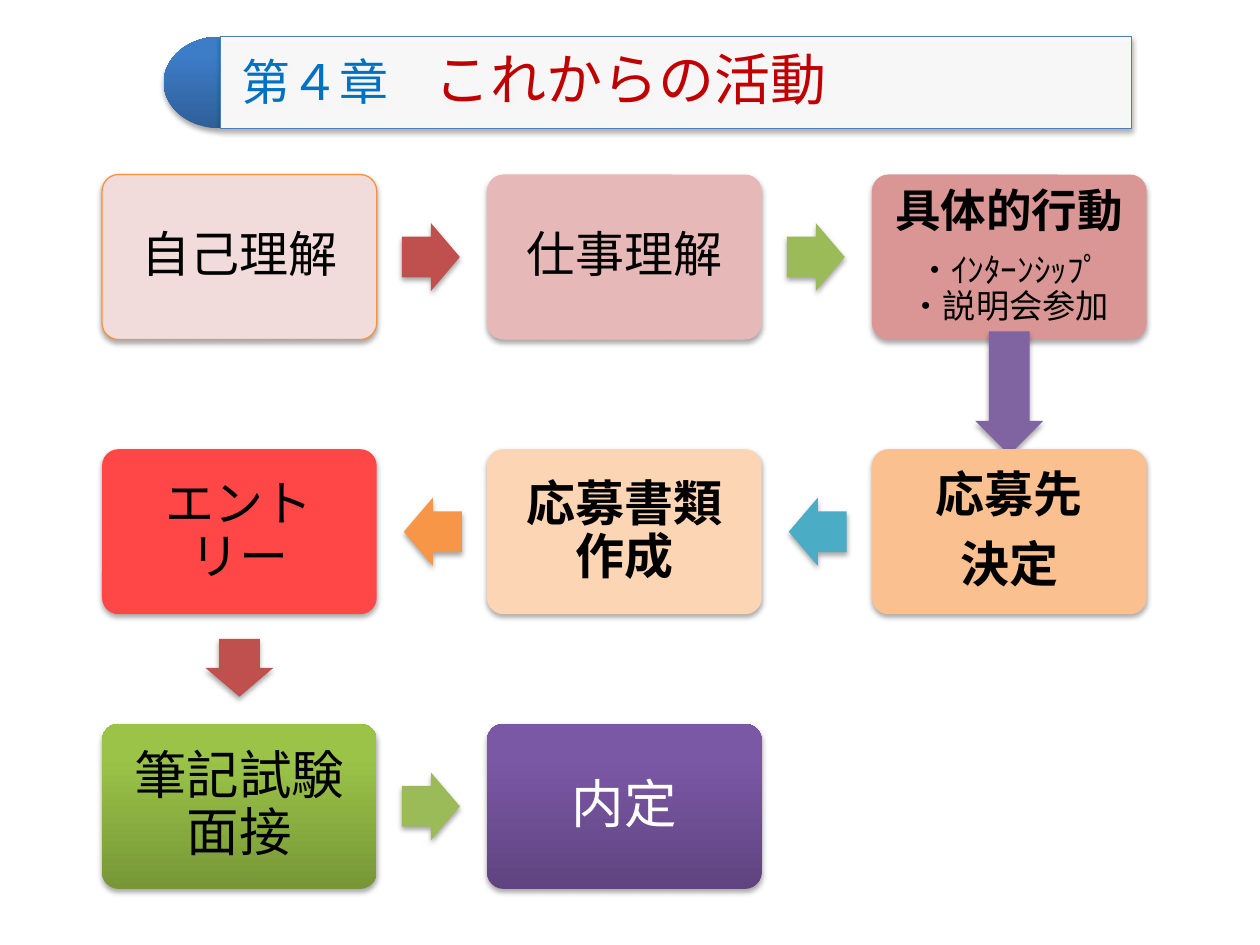
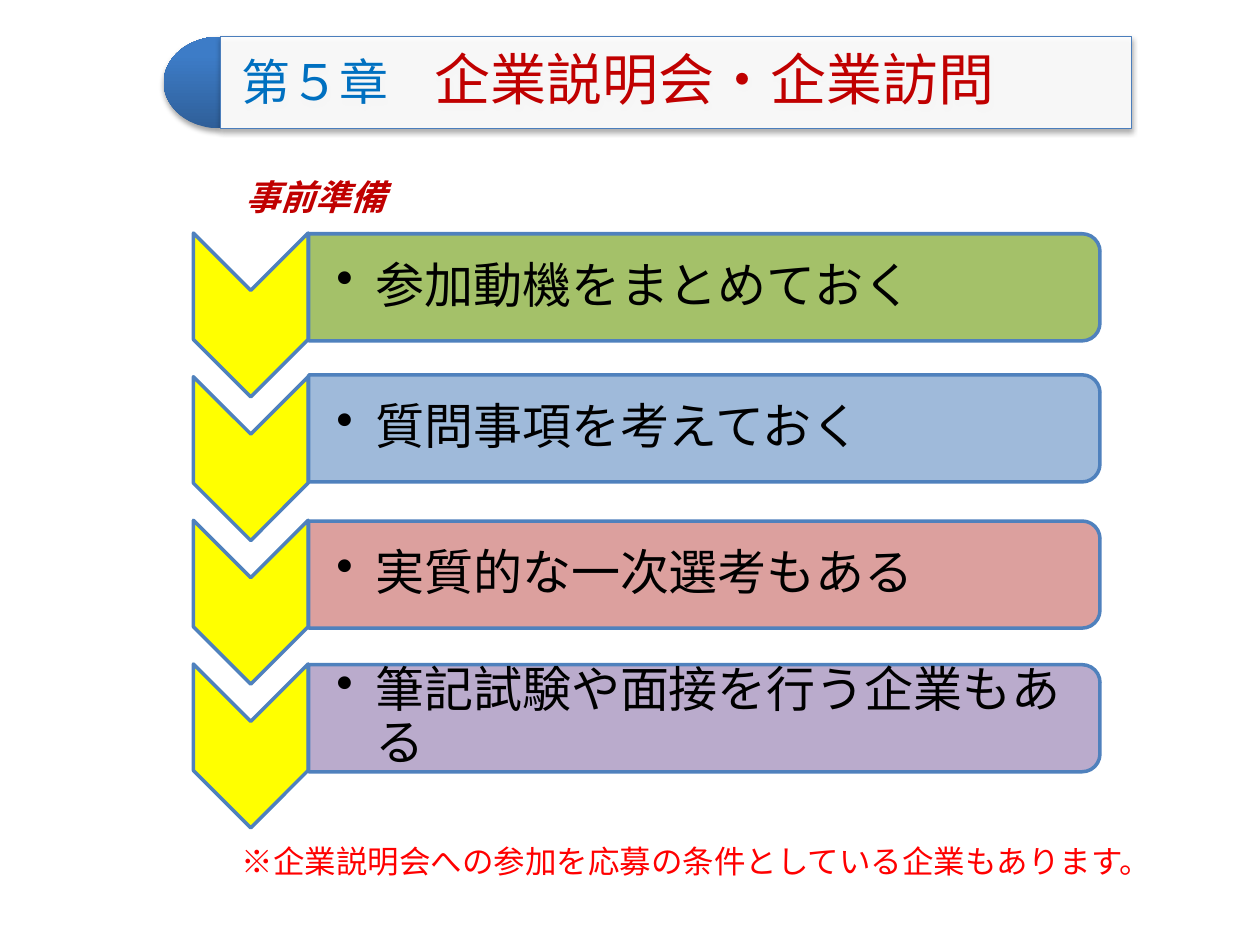
from dataclasses import dataclass

from lxml import etree
from pptx import Presentation
from pptx import util as u
from pptx.dml.color import RGBColor
from pptx.enum import shapes, text
from pptx.oxml import ns

SHAPE = shapes.MSO_SHAPE


@dataclass(frozen=True)
class Theme:
    font: str = "Calibri"
    title_font: str = "Noto Sans CJK JP"
    black: str = "000000"
    white: str = "FFFFFF"
    chapter: str = "0070C0"
    heading: str = "C00000"
    note: str = "FF0000"
    title_line: str = "4B7EBC"
    step_line: str = "4F81BD"
    chevron: str = "FFFF00"
    blue: tuple = ("2F5F99", "3D7CC7")
    green: tuple = ("779737", "9BC348")
    purple: tuple = ("5F4480", "7B58A6")
    title_size: int = 32
    large: int = 30
    body: int = 28
    medium: int = 26
    subhead: int = 20
    detail: int = 19
    small: int = 18


class Painter:
    """Holds the theme, the deck and the current page."""

    def __init__(self, theme):
        self.theme = theme
        self.deck = Presentation()
        self.deck.slide_width = u.Inches(10)
        self.deck.slide_height = u.Inches(7.5)
        self.page = None

    def new_page(self):
        self.page = self.deck.slides.add_slide(self.deck.slide_layouts[6])

    # Shapes
    def shape(self, kind, left, top, width, height, fill, line=None,
              weight=0.75, alpha=None, shadow=False, adjust=(), turn=0):
        box = self.page.shapes.add_shape(
            kind, *map(u.Inches, (left, top, width, height)))
        box.rotation = turn
        for index, value in enumerate(adjust):
            box.adjustments[index] = value
        self.paint(box, fill, alpha)
        if line:
            box.line.color.rgb = RGBColor.from_string(line)
            box.line.width = u.Pt(weight)
        else:
            box.line.fill.background()
        box.shadow.inherit = False
        if shadow:
            self.add_shadow(box)
        return box

    def centred(self, kind, x, y, width, height, fill, **style):
        """Place a shape, often a turned one, by its centre."""
        return self.shape(kind, x - width / 2, y - height / 2,
                          width, height, fill, **style)

    def paint(self, box, fill, alpha):
        if isinstance(fill, tuple):
            box.fill.gradient()
            box.fill.gradient_angle = 90
            for stop, colour, place in zip(box.fill.gradient_stops, fill, (0, 0.8)):
                stop.color.rgb = RGBColor.from_string(colour)
                stop.position = place
            return
        box.fill.solid()
        box.fill.fore_color.rgb = RGBColor.from_string(fill)
        if alpha:
            colour = box._element.spPr.find(ns.qn("a:solidFill"))[0]
            etree.SubElement(colour, ns.qn("a:alpha"), val=str(alpha * 1000))

    def add_shadow(self, box):
        effects = box._element.spPr.find(ns.qn("a:effectLst"))
        outer = etree.SubElement(
            effects, ns.qn("a:outerShdw"), blurRad=str(u.Pt(3.1)),
            dist=str(u.Pt(1.8)), dir="5400000", rotWithShape="0")
        colour = etree.SubElement(outer, ns.qn("a:srgbClr"), val=self.theme.black)
        etree.SubElement(colour, ns.qn("a:alpha"), val="35000")

    # Text
    def frame(self, box, margins=(0.1, 0.05, 0.1, 0.05),
              anchor=text.MSO_ANCHOR.MIDDLE):
        frame = box.text_frame
        frame.word_wrap = True
        frame.vertical_anchor = anchor
        (frame.margin_left, frame.margin_top,
         frame.margin_right, frame.margin_bottom) = map(u.Inches, margins)
        return frame

    def style(self, font, size, colour, name=None, bold=False, italic=False):
        font.name = name or self.theme.font
        font.size = u.Pt(size)
        font.color.rgb = RGBColor.from_string(colour)
        font.bold = bold
        font.italic = italic

    def space(self, para, align, after):
        para.alignment = align
        para.line_spacing = 0.9
        para.space_after = u.Pt(after)

    def textbox(self, left, top, width, height, **frame_style):
        box = self.page.shapes.add_textbox(
            *map(u.Inches, (left, top, width, height)))
        return self.frame(box, **frame_style)

    def label(self, words, left, top, width, height, size, colour, **font):
        para = self.textbox(left, top, width, height,
                            anchor=text.MSO_ANCHOR.TOP).paragraphs[0]
        para.text = words
        self.style(para.font, size, colour, **font)

    # Chapter title band
    def title(self, chapter, heading):
        theme = self.theme
        self.shape(SHAPE.PIE, 1.3, 0.29, 0.9, 0.73, theme.blue,
                   shadow=True, adjust=(54, 162))
        band = self.shape(SHAPE.RECTANGLE, 1.75, 0.29, 7.23, 0.73, theme.white,
                          line=theme.title_line, alpha=90, shadow=True)
        para = self.frame(band, (0.17,) * 4).paragraphs[0]
        self.space(para, text.PP_ALIGN.LEFT, 0.35 * theme.title_size)
        for words, size, colour, name in (
                (chapter, theme.body, theme.chapter, theme.title_font),
                ("\u3000".replace("\u3000", "　"), theme.medium, theme.black, theme.font),
                (heading, theme.title_size, theme.heading, theme.title_font)):
            span = para.add_run()
            span.text = words
            self.style(span.font, size, colour, name)

    # Flow chart
    def card(self, x, y, fill, lines, colour, line=None):
        """Draw a card; lines holds (words, size, bold) paragraphs."""
        box = self.centred(SHAPE.ROUNDED_RECTANGLE, x, y, 2.18, 1.31, fill,
                           line=line, shadow=True, adjust=(0.1,))
        frame = self.frame(box, (0.12,) * 4)
        for index, (words, size, bold) in enumerate(lines):
            para = frame.add_paragraph() if index else frame.paragraphs[0]
            para.text = words
            self.space(para, text.PP_ALIGN.CENTER, 0.35 * size)
            self.style(para.font, size, colour, bold=bold)

    def arrow(self, x, y, fill, turn=0, length=0.46):
        self.centred(SHAPE.RIGHT_ARROW, x, y, length, 0.54, fill,
                     shadow=True, adjust=(0.6, 0.5), turn=turn)

    # Chevron list
    def step(self, words, fill, chevron_y, band_y):
        theme = self.theme
        outline = dict(line=theme.step_line, weight=2, turn=90)
        self.centred(SHAPE.CHEVRON, 1.99, chevron_y, 1.3, 0.91,
                     theme.chevron, **outline)
        self.centred(SHAPE.ROUND_2_SAME_RECTANGLE, 5.59, band_y, 0.85, 6.28,
                     fill, alpha=90, **outline)
        para = self.textbox(2.45, band_y - 0.38, 6.24, 0.76,
                            margins=(0.22, 0.02, 0.02, 0.02)).paragraphs[0]
        para.text = words
        para.level = 1
        self.space(para, text.PP_ALIGN.LEFT, 0.15 * theme.body)
        self.style(para.font, theme.body, theme.black)
        props = para._p.get_or_add_pPr()
        props.set("marL", str(u.Inches(0.31)))
        props.set("indent", str(u.Inches(-0.31)))
        bullet = etree.Element(ns.qn("a:buChar"), char="•")
        props.find(ns.qn("a:defRPr")).addprevious(bullet)


def activities_page(painter):
    theme = painter.theme
    painter.new_page()
    columns = [1.9 + 3.055 * index for index in range(3)]
    rows = [2.04 + 2.18 * index for index in range(3)]
    body, large = theme.body, theme.large

    # Each card with the direction and colour of the arrow leaving it
    cards = (
        (0, 0, "F2DCDB", [("自己理解", body, False)], "right", "C0504D"),
        (1, 0, "E6B9B8", [("仕事理解", body, False)], "right", "9BBB59"),
        (2, 0, "D99694", [("具体的行動", theme.medium, True),
                          ("・ｲﾝﾀｰﾝｼｯﾌﾟ\n・説明会参加", theme.detail, False)],
         "long down", "8064A2"),
        (2, 1, "FAC090", [("応募先", body, True), ("決定", body, True)],
         "left", "4BACC6"),
        (1, 1, "FCD5B5", [("応募書類作成", body, True)], "left", "F79646"),
        (0, 1, "FF4747", [("エントリー", body, False)], "down", "C0504D"),
        (0, 2, theme.green, [("筆記試験\n面接", large, False)], "right", "9BBB59"),
        (1, 2, theme.purple, [("内定", large, False)], None, None),
    )
    # Offset from the card's centre, rotation and length
    arrows = {"right": (1.52, 0, 0, 0.46), "left": (-1.52, 0, 180, 0.46),
              "down": (0, 1.08, 90, 0.46), "long down": (0, 1.08, 90, 0.98)}
    for column, row, fill, lines, direction, arrow_fill in cards:
        x, y = columns[column], rows[row]
        first = (column, row) == (0, 0)
        painter.card(x, y, fill, lines,
                     theme.white if fill == theme.purple else theme.black,
                     line="F69240" if first else None)
        if direction:
            across, down, turn, length = arrows[direction]
            painter.arrow(x + across, y + down, arrow_fill, turn, length)
    painter.title("第４章", "これからの活動")


def visits_page(painter):
    theme = painter.theme
    painter.new_page()
    painter.title("第５章", "企業説明会・企業訪問")
    steps = (
        ("参加動機をまとめておく", "9BBB59", 2.28),
        ("質問事項を考えておく", "95B3D7", 3.4),
        ("実質的な一次選考もある", "D99694", 4.56),
        ("筆記試験や面接を行う企業もある", "B3A2C7", 5.7),
    )
    for index, (words, fill, band_y) in enumerate(steps):
        painter.step(words, fill, 2.5 + 1.14 * index, band_y)
    painter.label("※企業説明会への参加を応募の条件としている企業もあります。",
                  1.82, 6.63, 7.48, 0.4, theme.small, theme.note)
    painter.label("事前準備", 1.85, 1.34, 2.43, 0.44, theme.subhead,
                  theme.heading, bold=True, italic=True)


def main():
    painter = Painter(Theme())
    activities_page(painter)
    visits_page(painter)
    painter.deck.save("out.pptx")


if __name__ == "__main__":
    main()
